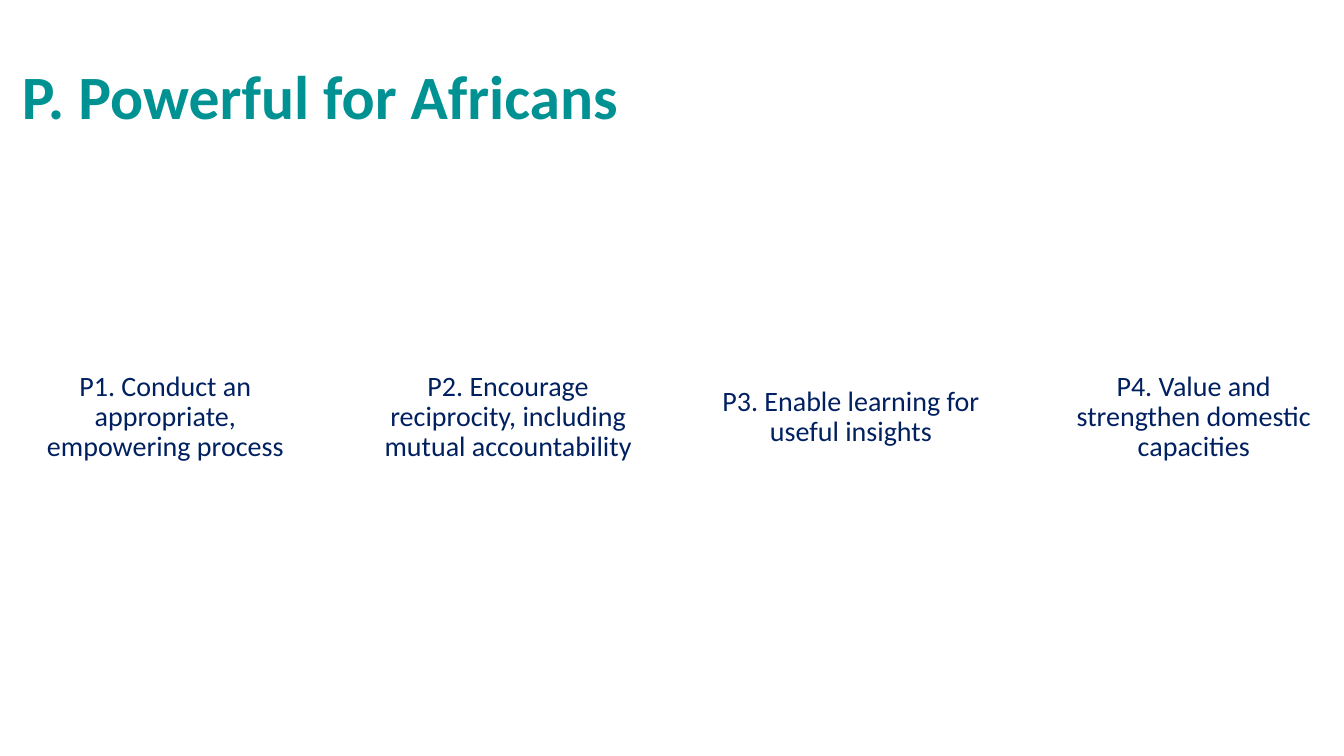
import pptx
import pptx.dml.color
import pptx.enum.shapes
import pptx.enum.text
import pptx.util

Inches = pptx.util.Inches
RGBColor = pptx.dml.color.RGBColor
ALIGN = pptx.enum.text.PP_ALIGN

TEAL = RGBColor(0x00, 0x91, 0x93)
NAVY = RGBColor(0x00, 0x20, 0x60)
WHITE = RGBColor(0xFF, 0xFF, 0xFF)
FONT = "Calibri"

PRINCIPLES = [
    "P1. Conduct an appropriate, empowering process",
    "P2. Encourage reciprocity, including mutual accountability",
    "P3. Enable learning for useful insights",
    "P4. Value and strengthen domestic capacities",
]
CARD_LEFT, CARD_TOP = 0.28, 3.46
CARD_WIDTH, CARD_HEIGHT = 2.72, 1.36
CARD_PITCH = 3.4


def write_text(shape, text, size, color, alignment, bold=False):
    frame = shape.text_frame
    frame.word_wrap = True
    frame.vertical_anchor = pptx.enum.text.MSO_ANCHOR.MIDDLE
    paragraph = frame.paragraphs[0]
    paragraph.alignment = alignment
    paragraph.line_spacing = 0.9
    run = paragraph.add_run()
    run.text = text
    run.font.name = FONT
    run.font.size = pptx.util.Pt(size)
    run.font.bold = bold
    run.font.color.rgb = color


def add_title(slide, text):
    title = slide.shapes.add_textbox(
        Inches(0.12), Inches(0.26), Inches(11.5), Inches(1.45))
    write_text(title, text, 44, TEAL, ALIGN.LEFT, bold=True)


def add_card(slide, left, text):
    card = slide.shapes.add_shape(
        pptx.enum.shapes.MSO_SHAPE.ROUNDED_RECTANGLE,
        Inches(left), Inches(CARD_TOP), Inches(CARD_WIDTH), Inches(CARD_HEIGHT))
    card.adjustments[0] = 0.1
    card.shadow.inherit = False
    card.fill.solid()
    card.fill.fore_color.rgb = WHITE
    card.line.fill.background()
    frame = card.text_frame
    frame.margin_left = frame.margin_right = Inches(0.04)
    frame.margin_top = frame.margin_bottom = Inches(0.03)
    write_text(card, text, 20, NAVY, ALIGN.CENTER)


def main():
    presentation = pptx.Presentation()
    presentation.slide_width = Inches(13.33)
    presentation.slide_height = Inches(7.5)
    slide = presentation.slides.add_slide(presentation.slide_layouts[6])

    # Heading
    add_title(slide, "P. Powerful for Africans")

    # Row of principles
    for index, principle in enumerate(PRINCIPLES):
        add_card(slide, CARD_LEFT + index * CARD_PITCH, principle)

    presentation.save("out.pptx")


if __name__ == "__main__":
    main()
